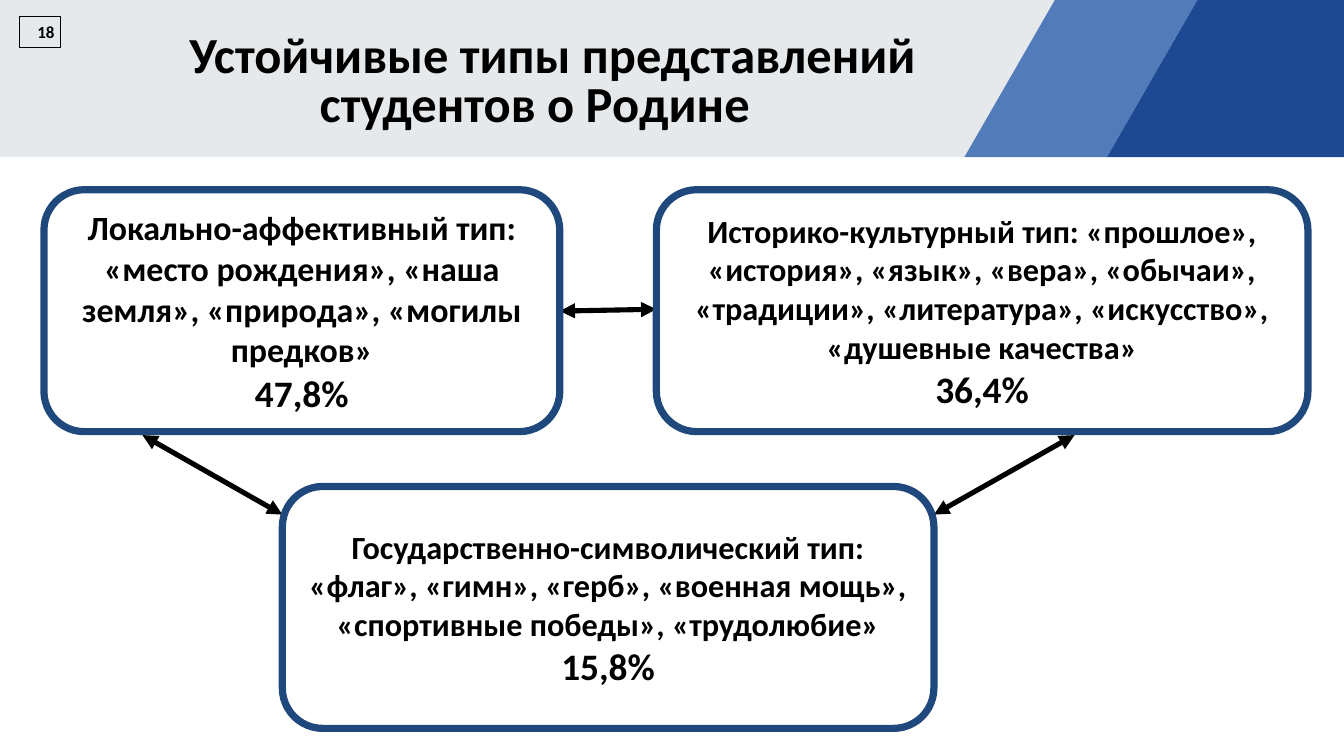
"""Build the slide on stable types of students' ideas of the Motherland."""
import lxml.etree
import pptx
import pptx.dml.color
import pptx.enum.shapes
import pptx.enum.text
import pptx.oxml.ns
import pptx.util

WIDTH, HEIGHT = pptx.util.Inches(21.99), pptx.util.Inches(12.37)
SHAPES = pptx.enum.shapes.MSO_SHAPE
ALIGN = pptx.enum.text.PP_ALIGN
ANCHOR = pptx.enum.text.MSO_ANCHOR
BLACK, WHITE, NAVY = "000000", "FFFFFF", "1F497D"
BAND_H = 20.78
CARD_W, CARD_H = 48.48, 32


def color(value):
    """Turn a hex string into a colour."""
    return pptx.dml.color.RGBColor.from_string(value)


def x(share):
    """Turn a percentage of the slide width into a length."""
    return round(WIDTH * share / 100)


def y(share):
    """Turn a percentage of the slide height into a length."""
    return round(HEIGHT * share / 100)


def write(p, text, size, align=ALIGN.CENTER, bold=True):
    """Put one formatted run into a paragraph."""
    p.alignment = align
    r = p.add_run()
    r.text = text
    r.font.name = "Calibri"
    r.font.size = pptx.util.Pt(size)
    r.font.bold = bold
    r.font.color.rgb = color(BLACK)


def add_stripe(s, bottom, top, fill):
    """Draw one slanted header stripe from its bottom and top spans."""
    corners = [(x(bottom[0]), y(BAND_H)), (x(top[0]), 0),
               (x(top[1]), 0), (x(bottom[1]), y(BAND_H))]
    builder = s.shapes.build_freeform(*corners[0])
    builder.add_line_segments(corners[1:], close=True)
    sp = builder.convert_to_shape()
    sp.shadow.inherit = False
    sp.fill.solid()
    sp.fill.fore_color.rgb = color(fill)
    sp.line.fill.background()


def add_title(s, text):
    """Add the centred slide title."""
    sp = s.shapes.add_textbox(x(3.46), y(4.2), x(72.67), y(13.82))
    tf = sp.text_frame
    tf.word_wrap = True
    p = tf.paragraphs[0]
    p.line_spacing = 0.8
    p._p.get_or_add_pPr().set("indent", str(pptx.util.Inches(0.59)))
    write(p, text, 59.5)


def add_box(s, kind, box, line, line_width, fill=None):
    """Add an outlined shape and return its text frame."""
    left, top, width, height = box
    sp = s.shapes.add_shape(kind, x(left), y(top), x(width), y(height))
    sp.shadow.inherit = False
    if fill:
        sp.fill.solid()
        sp.fill.fore_color.rgb = color(fill)
    else:
        sp.fill.background()
    sp.line.color.rgb = color(line)
    sp.line.width = pptx.util.Pt(line_width)
    tf = sp.text_frame
    tf.word_wrap = True
    tf.vertical_anchor = ANCHOR.MIDDLE
    return tf


def add_card(s, left, top, width, text, size, percent):
    """Add a rounded card with a description and its percentage."""
    tf = add_box(s, SHAPES.ROUNDED_RECTANGLE, (left, top, width, CARD_H),
                 NAVY, 8.5, WHITE)
    write(tf.paragraphs[0], text, size)
    write(tf.add_paragraph(), percent, 44)


def add_arrow(s, start, end):
    """Add a thick arrow with a head at both ends."""
    cx = s.shapes.add_connector(
        pptx.enum.shapes.MSO_CONNECTOR.STRAIGHT,
        x(start[0]), y(start[1]), x(end[0]), y(end[1]))
    cx.line.color.rgb = color(BLACK)
    cx.line.width = pptx.util.Pt(6)
    ln = cx.line._get_or_add_ln()
    for tag in ("a:headEnd", "a:tailEnd"):
        lxml.etree.SubElement(ln, pptx.oxml.ns.qn(tag), type="triangle")
    lxml.etree.SubElement(cx._element.spPr, pptx.oxml.ns.qn("a:effectLst"))


def main():
    """Build and save the slide."""
    prs = pptx.Presentation()
    prs.slide_width, prs.slide_height = WIDTH, HEIGHT
    s = prs.slides.add_slide(prs.slide_layouts[6])

    add_stripe(s, (0, 71.9), (0, 78.63), "E6E9EB")
    add_stripe(s, (71.76, 82.36), (78.49, 89.09), "517BB9")
    add_stripe(s, (82.36, 100), (89.09, 100), "1D4992")
    add_title(s, "Устойчивые типы представлений студентов о Родине")

    number = add_box(s, SHAPES.RECTANGLE, (1.46, 2.1, 3.05, 4.1), BLACK, 0.75)
    write(number.paragraphs[0], "18", 20, ALIGN.RIGHT)

    for start, end in [((41.65, 41.15), (48.84, 40.91)),
                       ((69.49, 68.07), (79.95, 57.55)),
                       ((21.01, 68.07), (10.6, 57.55))]:
        add_arrow(s, start, end)

    add_card(s, 3.27, 25.1, 38.38,
             "Локально-аффективный тип: «место рождения», «наша земля», "
             "«природа», «могилы предков»", 40, "47,8%")
    add_card(s, 48.84, 25.1, CARD_W,
             "Историко-культурный тип: «прошлое», «история», «язык», «вера», "
             "«обычаи», «традиции», «литература», «искусство», "
             "«душевные качества»", 38, "36,4%")
    add_card(s, 21.01, 64.35, CARD_W,
             "Государственно-символический тип: «флаг», «гимн», «герб», "
             "«военная мощь», «спортивные победы», «трудолюбие»", 38, "15,8%")

    prs.save("out.pptx")


if __name__ == "__main__":
    main()
